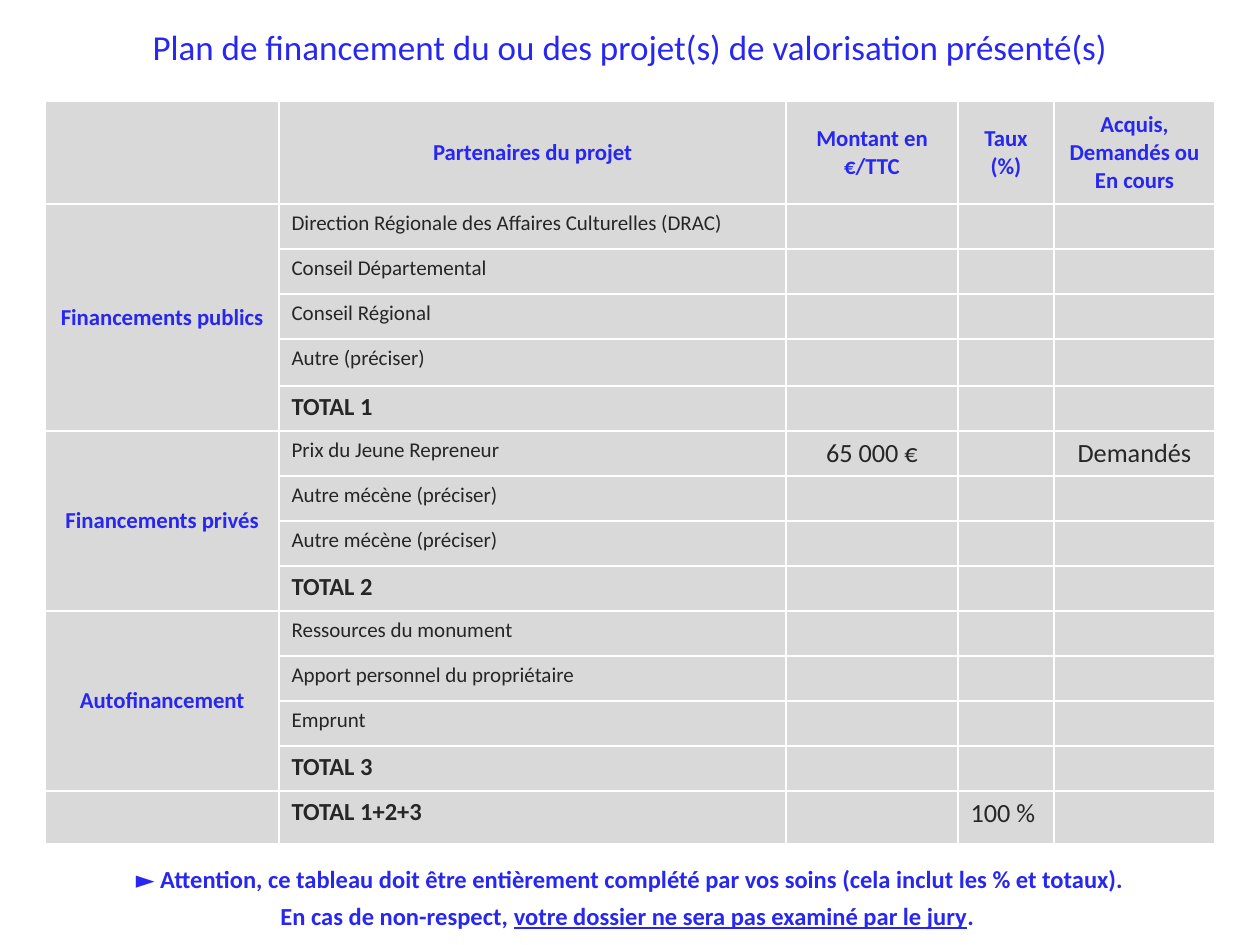
import pptx
import pptx.util
import pptx.dml.color
import pptx.enum.text
import pptx.oxml

PX = 914400 // 126
COLORS = {"blue": "2727F1", "dark": "262626", "cell": "D9D9D9", "border": "FFFFFF"}
FONT = "Calibri"
ALIGN = pptx.enum.text.PP_ALIGN
ANCHOR = pptx.enum.text.MSO_ANCHOR

COLUMNS = [234, 507, 172, 96, 161]
HEADERS = ["", "Partenaires du projet", "Montant en €/TTC", "Taux (%)",
           "Acquis, Demandés ou En cours"]
# Each group: heading, then its lines, the last one being the total
GROUPS = [
    ("Financements publics", ["Direction Régionale des Affaires Culturelles (DRAC)",
                              "Conseil Départemental", "Conseil Régional",
                              "Autre (préciser)", "TOTAL 1"]),
    ("Financements privés", ["Prix du Jeune Repreneur", "Autre mécène (préciser)",
                             "Autre mécène (préciser)", "TOTAL 2"]),
    ("Autofinancement", ["Ressources du monument", "Apport personnel du propriétaire",
                         "Emprunt", "TOTAL 3"]),
    ("", ["TOTAL 1+2+3"]),
]
ROWS = [103] + [45] * 3 + [47] + [45] * 9 + [53]
VALUES = {(6, 2): "65 000 €", (6, 4): "Demandés", (14, 3): "100 %"}


def px(n):
    return pptx.util.Emu(n * PX)


def rgb(name):
    return pptx.dml.color.RGBColor.from_string(COLORS[name])


def place(sp, left, top, width, height):
    sp.left, sp.top, sp.width, sp.height = map(px, (left, top, width, height))


def add_text(p, text, size=12, color="dark", bold=False, underline=False, align=ALIGN.LEFT):
    p.alignment = align
    r = p.add_run()
    r.text = text
    r.font.name = FONT
    r.font.size = pptx.util.Pt(size)
    r.font.bold = bold
    r.font.underline = underline
    r.font.color.rgb = rgb(color)


def format_cell(cell):
    tc_pr = cell._tc.get_or_add_tcPr()
    for side in "LRTB":
        tc_pr.append(pptx.oxml.parse_xml(
            f'<a:ln{side} xmlns:a="http://schemas.openxmlformats.org/drawingml/2006/main" '
            f'w="12700"><a:solidFill><a:srgbClr val="{COLORS["border"]}"/></a:solidFill>'
            f'</a:ln{side}>'))
    cell.fill.solid()
    cell.fill.fore_color.rgb = rgb("cell")
    # Keeps empty cells from stretching their rows
    cell.text_frame.paragraphs[0]._p.get_or_add_endParaRPr().set("sz", "1200")


def fill_heading(cell, text):
    if text:
        cell.vertical_anchor = ANCHOR.MIDDLE
        add_text(cell.text_frame.paragraphs[0], text, size=13, color="blue",
                 bold=True, align=ALIGN.CENTER)


def add_title(slide, text):
    sp = slide.shapes.title
    place(sp, 0, -8, 1260, 108)
    sp.text_frame.vertical_anchor = ANCHOR.MIDDLE
    add_text(sp.text_frame.paragraphs[0], text, size=20, color="blue", align=ALIGN.CENTER)


def add_plan(slide):
    table = slide.shapes.add_table(len(ROWS), len(COLUMNS), px(45), px(101),
                                   px(sum(COLUMNS)), px(sum(ROWS))).table
    table.first_row = table.horz_banding = False
    for column, width in zip(table.columns, COLUMNS):
        column.width = px(width)
    for row, height in zip(table.rows, ROWS):
        row.height = px(height)
    for cell in table.iter_cells():
        format_cell(cell)

    for col, text in enumerate(HEADERS):
        fill_heading(table.cell(0, col), text)

    # Groups of lines beside a merged heading
    row = 1
    for heading, lines in GROUPS:
        if len(lines) > 1:
            table.cell(row, 0).merge(table.cell(row + len(lines) - 1, 0))
        fill_heading(table.cell(row, 0), heading)
        for line in lines:
            total = line.startswith("TOTAL")
            add_text(table.cell(row, 1).text_frame.paragraphs[0], line,
                     size=14 if total else 12, bold=total)
            row += 1

    for (row, col), text in VALUES.items():
        add_text(table.cell(row, col).text_frame.paragraphs[0], text, size=15,
                 align=ALIGN.LEFT if col == 3 else ALIGN.CENTER)


def add_note(slide, paragraphs):
    sp = slide.shapes.add_textbox(0, 0, 0, 0)
    place(sp, 88, 858, 1084, 81)
    tf = sp.text_frame
    tf.word_wrap = True
    for i, runs in enumerate(paragraphs):
        p = tf.add_paragraph() if i else tf.paragraphs[0]
        p.space_before = pptx.util.Pt(4.2)
        for text, underline in runs:
            add_text(p, text, size=14, color="blue", bold=True,
                     underline=underline, align=ALIGN.CENTER)


def main():
    prs = pptx.Presentation()
    prs.slide_width, prs.slide_height = px(1260), px(945)
    slide = prs.slides.add_slide(prs.slide_layouts[5])
    add_title(slide, "Plan de financement du ou des projet(s) de valorisation présenté(s)")
    add_plan(slide)
    add_note(slide, [
        [("► Attention, ce tableau doit être entièrement complété par vos soins "
          "(cela inclut les % et totaux).", False)],
        [("En cas de non-respect, ", False),
         ("votre dossier ne sera pas examiné par le jury", True), (". ", False)],
    ])
    prs.save("out.pptx")


if __name__ == "__main__":
    main()
